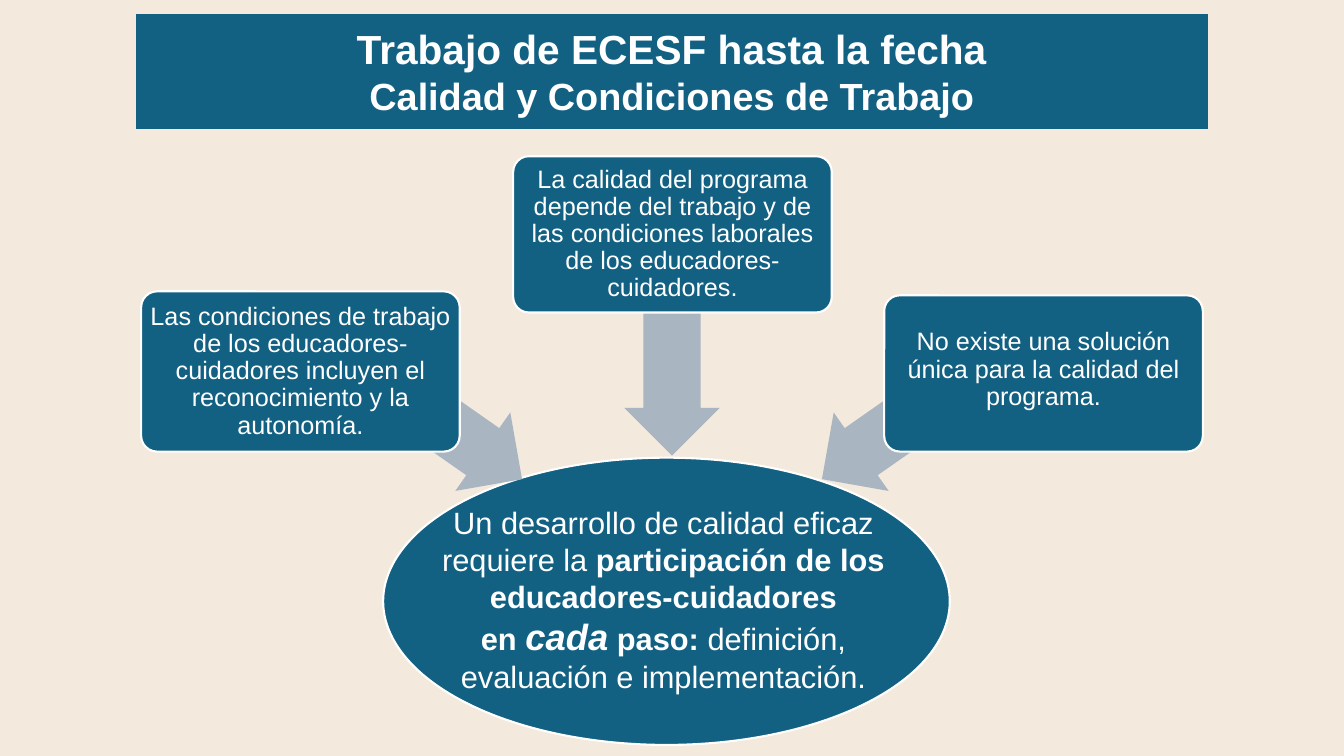
from dataclasses import dataclass
from typing import NamedTuple

from pptx import Presentation
from pptx.dml.color import RGBColor
from pptx.enum import shapes, text
from pptx.util import Inches, Pt


@dataclass(frozen=True)
class Theme:
    font: str = "Arial"
    sand: str = "F3E9DC"
    teal: str = "126082"
    gray: str = "A9B5C0"
    white: str = "FFFFFF"
    title: int = 29
    subtitle: int = 27
    emphasis: int = 26
    conclusion: int = 22
    reason: int = 18
    outline: float = 1.5


class Box(NamedTuple):
    left: float
    top: float
    width: float
    height: float


class Run(NamedTuple):
    words: str
    size: int
    bold: bool = False
    italic: bool = False


class Reason(NamedTuple):
    words: str
    box: Box
    arrow: Box
    rotation: int
    bottom_inset: float = 0.04


THEME = Theme()
SHAPE = shapes.MSO_SHAPE

REASONS = [
    Reason("Las condiciones de trabajo de los educadores-cuidadores incluyen el "
           "reconocimiento y la autonomía.",
           Box(1.4, 2.89, 3.16, 1.59), Box(2.74, 3.51, 2.68, 0.95), 215),
    Reason("La calidad del programa depende del trabajo y de las condiciones "
           "laborales de los educadores-cuidadores.",
           Box(5.09, 1.55, 3.16, 1.55), Box(5.2, 2.58, 2.93, 0.95), 270),
    Reason("No existe una solución única para la calidad del programa.",
           Box(8.77, 2.93, 3.16, 1.55), Box(7.91, 3.51, 2.68, 0.95), 325, 0.11),
]

TITLE = [
    [Run("Trabajo de ECESF hasta la fecha", THEME.title, bold=True)],
    [Run("Calidad y Condiciones de Trabajo", THEME.subtitle, bold=True)],
]

CONCLUSION = [
    [Run("Un desarrollo de calidad eficaz requiere la ", THEME.conclusion),
     Run("participación de los educadores-cuidadores", THEME.conclusion, bold=True)],
    [Run("en ", THEME.conclusion, bold=True),
     Run("cada", THEME.emphasis, bold=True, italic=True),
     Run(" paso: ", THEME.conclusion, bold=True),
     Run("definición, evaluación e implementación.", THEME.conclusion)],
]


def place(box: Box) -> list:
    return [Inches(length) for length in box]


def add_figure(slide, kind, box: Box, fill: str, outlined: bool = False,
               adjustments: tuple = (), rotation: int = 0):
    figure = slide.shapes.add_shape(kind, *place(box))
    figure.shadow.inherit = False
    figure.fill.solid()
    figure.fill.fore_color.rgb = RGBColor.from_string(fill)
    if outlined:
        figure.line.color.rgb = RGBColor.from_string(THEME.white)
        figure.line.width = Pt(THEME.outline)
    else:
        figure.line.fill.background()
    for index, value in enumerate(adjustments):
        figure.adjustments[index] = value
    figure.rotation = rotation
    return figure


def write(holder, paragraphs: list[list[Run]], *, insets: tuple,
          anchor=text.MSO_ANCHOR.MIDDLE, spacing: float = 1.0) -> None:
    frame = holder.text_frame
    frame.word_wrap = True
    frame.vertical_anchor = anchor
    (frame.margin_left, frame.margin_top,
     frame.margin_right, frame.margin_bottom) = place(Box(*insets))
    for index, runs in enumerate(paragraphs):
        paragraph = frame.add_paragraph() if index else frame.paragraphs[0]
        paragraph.alignment = text.PP_ALIGN.CENTER
        paragraph.line_spacing = spacing
        for part in runs:
            run = paragraph.add_run()
            run.text = part.words
            run.font.name = THEME.font
            run.font.size = Pt(part.size)
            run.font.bold = part.bold
            run.font.italic = part.italic
            run.font.color.rgb = RGBColor.from_string(THEME.white)


def add_reason(slide, reason: Reason) -> None:
    add_figure(slide, SHAPE.LEFT_ARROW, reason.arrow, THEME.gray,
               adjustments=(0.6, 0.5), rotation=reason.rotation)
    card = add_figure(slide, SHAPE.ROUNDED_RECTANGLE, reason.box, THEME.teal,
                      outlined=True, adjustments=(0.1,))
    write(card, [[Run(reason.words, THEME.reason)]], spacing=0.9,
          insets=(0.03, 0.04, 0.03, reason.bottom_inset))


def main() -> None:
    deck = Presentation()
    deck.slide_width, deck.slide_height = Inches(13.33), Inches(7.5)
    slide = deck.slides.add_slide(deck.slide_layouts[6])
    slide.background.fill.solid()
    slide.background.fill.fore_color.rgb = RGBColor.from_string(THEME.sand)

    add_figure(slide, SHAPE.OVAL, Box(3.8, 4.54, 5.62, 2.85), THEME.teal, outlined=True)
    conclusion = slide.shapes.add_textbox(*place(Box(4.17, 4.79, 4.82, 2.31)))
    write(conclusion, CONCLUSION, insets=(0.01,) * 4)

    for reason in REASONS:
        add_reason(slide, reason)

    banner = add_figure(slide, SHAPE.RECTANGLE, Box(1.35, 0.14, 10.63, 1.14), THEME.teal)
    write(banner, TITLE, insets=(0.1,) * 4, anchor=text.MSO_ANCHOR.TOP)
    deck.save("out.pptx")


if __name__ == "__main__":
    main()
